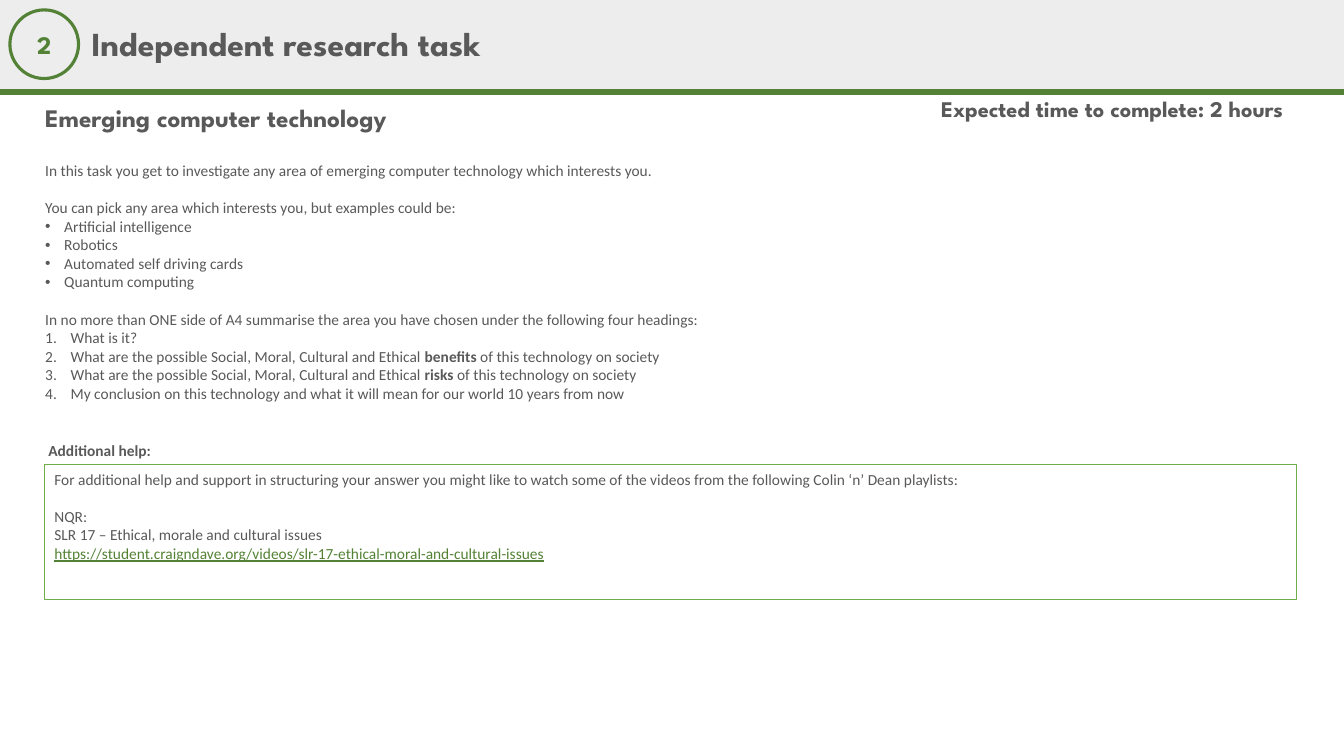
"""Build the independent research task slide."""
from lxml import etree
from pptx import Presentation
from pptx.dml.color import RGBColor
from pptx.enum.shapes import MSO_CONNECTOR, MSO_SHAPE
from pptx.enum.text import MSO_ANCHOR, PP_ALIGN
from pptx.oxml.ns import qn
from pptx.util import Cm, Pt

LEFT, CENTER = PP_ALIGN.LEFT, PP_ALIGN.CENTER
TOP, MIDDLE = MSO_ANCHOR.TOP, MSO_ANCHOR.MIDDLE
RECTANGLE, OVAL = MSO_SHAPE.RECTANGLE, MSO_SHAPE.OVAL
STRAIGHT = MSO_CONNECTOR.STRAIGHT

COLORS = {"band": "EDEDED", "rule": "538135", "text": "595959",
          "frame": "70AD47", "link": "548235"}
HEADING = {"name": "League Spartan", "bold": True}
BODY = {"name": "Calibri", "size": Pt(11)}
FORMATS = {
    "title": ("text", {**HEADING, "size": Pt(24)}),
    "subtitle": ("text", {**HEADING, "size": Pt(18)}),
    "time": ("text", {**HEADING, "size": Pt(16)}),
    "number": ("rule", {**HEADING, "size": Pt(18)}),
    "body": ("text", BODY),
    "label": ("text", {**BODY, "bold": True}),
    "link": ("link", {**BODY, "underline": True}),
}
LISTS = {
    "bullet": (0.48, "a:buChar", {"char": "•"}),
    "number": (0.64, "a:buAutoNum", {"type": "arabicPeriod"}),
}
SLIDE_WIDTH, SLIDE_HEIGHT = 33.87, 19.05
BAND_HEIGHT = 2.31
BLOCK_GAP = Pt(13.4)

HEADINGS = [
    ("Expected time to complete: 2 hours", "time", (23.47, 2.36, 10.39, 1.02), TOP),
    ("Emerging computer technology", "subtitle", (0.89, 2.51, 10.59, 1.02), MIDDLE),
    ("Independent research task", "title", (2.06, 0.23, 26.19, 1.85), MIDDLE),
]
TASK_BLOCKS = [
    [("In this task you get to investigate any area of emerging computer "
      "technology which interests you.", "body", None)],
    [("You can pick any area which interests you, but examples could be:", "body", None),
     ("Artificial intelligence", "body", "bullet"),
     ("Robotics", "body", "bullet"),
     ("Automated self driving cards", "body", "bullet"),
     ("Quantum computing", "body", "bullet")],
    [("In no more than ONE side of A4 summarise the area you have chosen under "
      "the following four headings:", "body", None),
     ("What is it?", "body", "number"),
     ("What are the possible Social, Moral, Cultural and Ethical *benefits* "
      "of this technology on society", "body", "number"),
     ("What are the possible Social, Moral, Cultural and Ethical *risks* "
      "of this technology on society", "body", "number"),
     ("My conclusion on this technology and what it will mean for our world "
      "10 years from now", "body", "number")],
]
HELP_BLOCKS = [
    [("For additional help and support in structuring your answer you might like to "
      "watch some of the videos from the following Colin ‘n’ Dean playlists:", "body", None)],
    [("NQR:", "body", None),
     ("SLR 17 – Ethical, morale and cultural issues", "body", None),
     ("https://student.craigndave.org/videos/slr-17-ethical-moral-and-cultural-issues",
      "link", None)],
]


def rgb(color):
    return RGBColor.from_string(COLORS[color])


def add_list_mark(paragraph, kind):
    indent, tag, attributes = LISTS[kind]
    properties = paragraph._p.get_or_add_pPr()
    properties.set("marL", str(Cm(indent)))
    properties.set("indent", str(-Cm(indent)))
    if kind == "bullet":
        etree.SubElement(properties, qn("a:buFont"), typeface="Arial")
    etree.SubElement(properties, qn(tag), **attributes)


def write(frame, blocks, anchor=TOP, align=LEFT, spacing=None):
    frame.word_wrap = True
    frame.vertical_anchor = anchor
    for block_index, block in enumerate(blocks):
        for line_index, (text, style, kind) in enumerate(block):
            first = block_index == line_index == 0
            paragraph = frame.paragraphs[0] if first else frame.add_paragraph()
            if kind:
                add_list_mark(paragraph, kind)
            paragraph.alignment = align
            if spacing:
                paragraph.line_spacing = spacing
            if block_index and not line_index:
                paragraph.space_before = BLOCK_GAP
            color, values = FORMATS[style]
            for part_index, part in enumerate(text.split("*")):
                run = paragraph.add_run()
                run.text = part
                for name, value in values.items():
                    setattr(run.font, name, value)
                run.font.color.rgb = rgb(color)
                if part_index % 2:
                    run.font.bold = True


def add_text(slide, place, blocks, **layout):
    box = slide.shapes.add_textbox(*map(Cm, place))
    write(box.text_frame, blocks, **layout)


def add_panel(slide, preset, place, fill=None, line=None, width=1):
    panel = slide.shapes.add_shape(preset, *map(Cm, place))
    panel.shadow.inherit = False
    if fill:
        panel.fill.solid()
        panel.fill.fore_color.rgb = rgb(fill)
    else:
        panel.fill.background()
    if line:
        panel.line.color.rgb = rgb(line)
        panel.line.width = Pt(width)
    else:
        panel.line.fill.background()
    return panel


def main():
    deck = Presentation()
    deck.slide_width, deck.slide_height = Cm(SLIDE_WIDTH), Cm(SLIDE_HEIGHT)
    slide = deck.slides.add_slide(deck.slide_layouts[6])

    add_panel(slide, RECTANGLE, (0, 0, SLIDE_WIDTH, BAND_HEIGHT), fill="band")
    rule = slide.shapes.add_connector(
        STRAIGHT, 0, Cm(BAND_HEIGHT), Cm(SLIDE_WIDTH), Cm(BAND_HEIGHT))
    rule.line.color.rgb = rgb("rule")
    rule.line.width = Pt(4.5)
    etree.SubElement(rule._element.spPr, qn("a:effectLst"))

    badge = add_panel(slide, OVAL, (0.25, 0.25, 1.73, 1.73), line="rule", width=2.25)
    write(badge.text_frame, [[("2", "number", None)]], anchor=MIDDLE, align=CENTER)
    for text, style, place, anchor in HEADINGS:
        add_text(slide, place, [[(text, style, None)]], anchor=anchor, spacing=0.9)

    add_text(slide, (0.89, 3.94, 19, 6.83), TASK_BLOCKS)
    add_text(slide, (0.97, 11, 16.94, 0.74), [[("Additional help:", "label", None)]])
    help_box = add_panel(slide, RECTANGLE, (1.12, 11.71, 31.55, 3.4), line="frame")
    write(help_box.text_frame, HELP_BLOCKS)

    deck.save("out.pptx")


if __name__ == "__main__":
    main()
